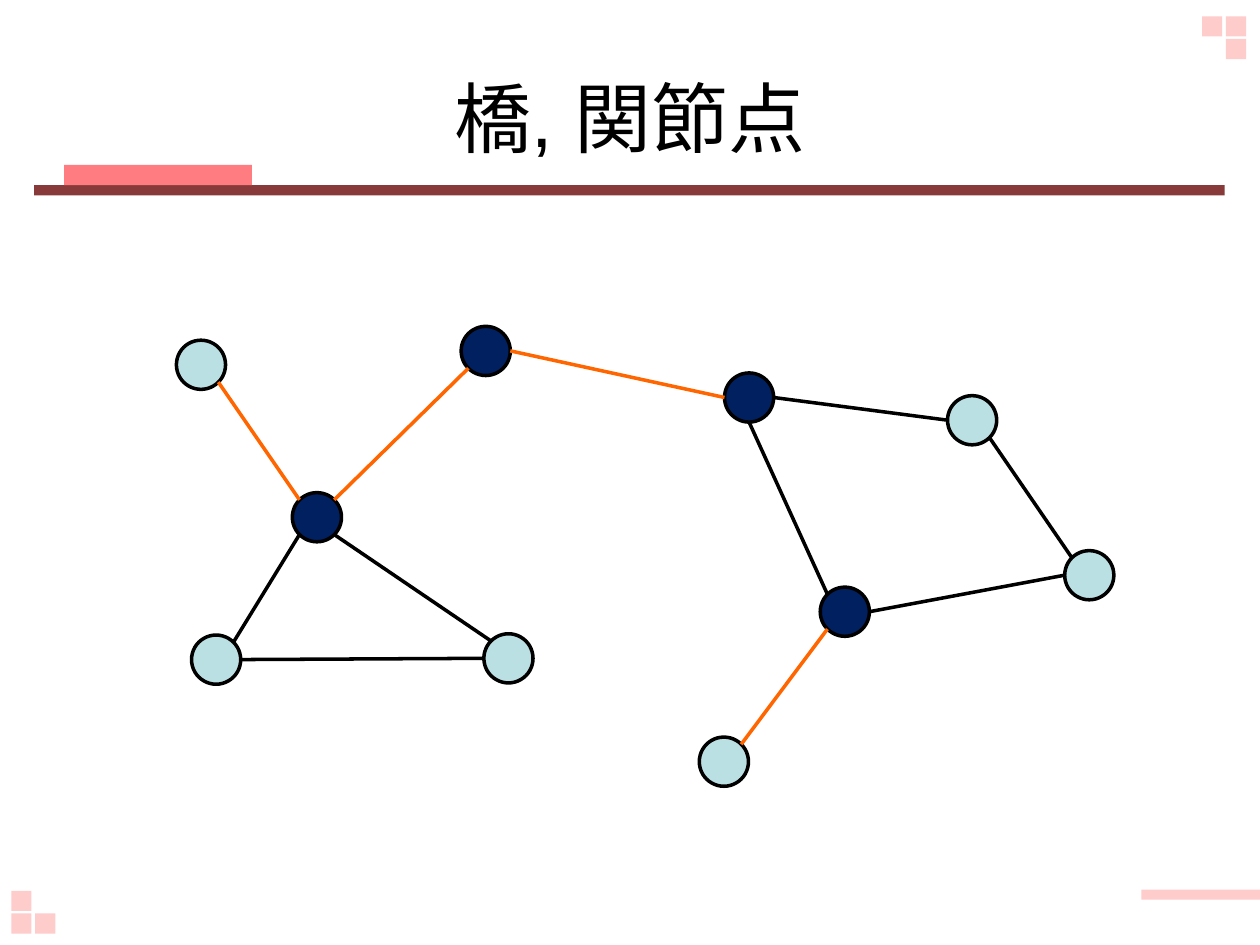
import math
from lxml import etree
from pptx import Presentation, util as u
from pptx.dml.color import RGBColor
from pptx.enum import shapes, text
from pptx.oxml.ns import qn

Inches = u.Inches


def paint(color_format, value):
    color_format.rgb = RGBColor.from_string(value)


def add_filled(kind, left, top, width, height, fill):
    shape = page.shapes.add_shape(
        kind, Inches(left), Inches(top), Inches(width), Inches(height))
    shape.shadow.inherit = False
    shape.fill.solid()
    paint(shape.fill.fore_color, fill)
    shape.line.fill.background()
    return shape


deck = Presentation()
deck.slide_width, deck.slide_height = Inches(10), Inches(7.5)
page = deck.slides.add_slide(deck.slide_layouts[5])

# Decorative bars and corner squares
square = 0.16
decorations = [
    (0.27, 1.47, 9.45, 0.08, "883A3A"),
    (0.51, 1.31, 1.49, 0.16, "FF7C80"),
    (9.06, 7.06, 0.94, 0.08, "FFCCCC"),
]
corner_squares = [(9.73, 0.13), (9.54, 0.13), (9.73, 0.31),
                  (0.09, 7.25), (0.28, 7.25), (0.09, 7.07)]
decorations += [(left, top, square, square, "FFCCCC") for left, top in corner_squares]
for decoration in decorations:
    add_filled(shapes.MSO_SHAPE.RECTANGLE, *decoration)

# Title
title = page.shapes.title
title.left, title.top = Inches(0.5), Inches(0.3)
title.width, title.height = Inches(9), Inches(1.25)
title.text_frame.vertical_anchor = text.MSO_ANCHOR.MIDDLE
para = title.text_frame.paragraphs[0]
para.alignment = text.PP_ALIGN.CENTER
span = para.add_run()
span.text = "橋, 関節点"
span.font.name = "Arial"
span.font.size = u.Pt(44)
paint(span.font.color, "000000")

# Graph vertices: left, top; articulation points are dark
diameter = 0.39
radius = diameter / 2
vertices = {
    "middle": (3.66, 2.59), "hub": (2.32, 3.91), "triangle right": (3.84, 5.03),
    "square top": (5.75, 2.96), "lower leaf": (5.55, 5.85),
    "square right": (7.52, 3.14), "far right": (8.45, 4.37),
    "square bottom": (6.51, 4.66), "triangle left": (1.52, 5.04),
    "upper leaf": (1.4, 2.7),
}
articulation_points = {"middle", "hub", "square top", "square bottom"}
for name, (left, top) in vertices.items():
    fill = "002060" if name in articulation_points else "BBE0E3"
    vertex = add_filled(shapes.MSO_SHAPE.OVAL, left, top, diameter, diameter, fill)
    paint(vertex.line.color, "000000")
    vertex.line.width = u.Pt(2)

# Graph edges: each end leaves its circle in a compass direction; bridges are orange
compass = {name: math.radians(45 * step) for step, name in
           enumerate(["E", "SE", "S", "SW", "W", "NW", "N", "NE"])}
bridge, plain = "FF6600", "000000"
edges = [
    ("upper leaf", "SE", "hub", "NW", bridge),
    ("hub", "NE", "middle", "SW", bridge),
    ("hub", "SW", "triangle left", "NE", plain),
    ("hub", "SE", "triangle right", "NW", plain),
    ("triangle left", "E", "triangle right", "W", plain),
    ("square top", "W", "middle", "E", bridge),
    ("square top", "S", "square bottom", "NW", plain),
    ("square bottom", "SW", "lower leaf", "NE", bridge),
    ("square bottom", "E", "far right", "W", plain),
    ("square top", "E", "square right", "W", plain),
    ("square right", "SE", "far right", "NW", plain),
]
for start, start_side, end, end_side, color in edges:
    ends = []
    for name, side in ((start, start_side), (end, end_side)):
        left, top = vertices[name]
        ends.append(Inches(left + radius + radius * math.cos(compass[side])))
        ends.append(Inches(top + radius + radius * math.sin(compass[side])))
    edge = page.shapes.add_connector(shapes.MSO_CONNECTOR.STRAIGHT, *ends)
    paint(edge.line.color, color)
    edge.line.width = u.Pt(2)
    etree.SubElement(edge._element.spPr, qn("a:effectLst"))

deck.save("out.pptx")
